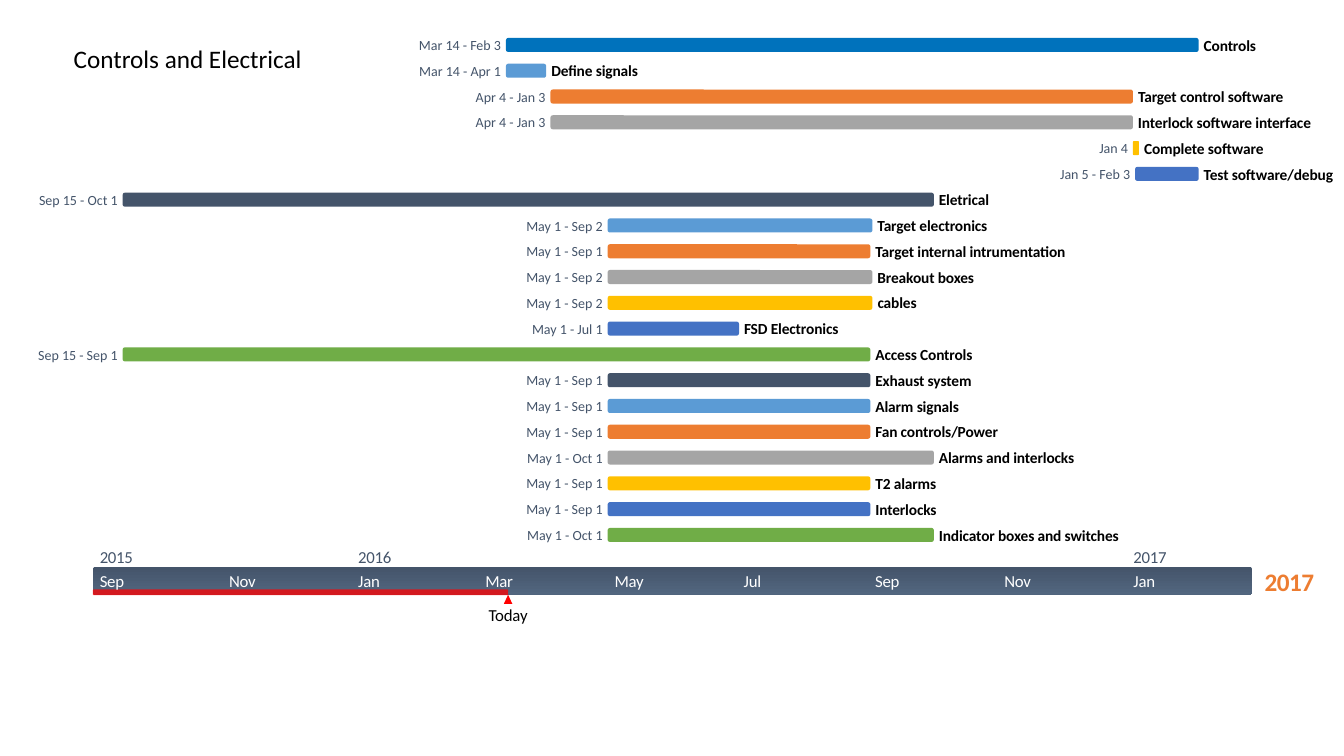
from lxml.etree import SubElement
from pptx import Presentation
from pptx.dml.color import RGBColor
from pptx.enum.shapes import MSO_SHAPE
from pptx.enum.text import MSO_ANCHOR, PP_ALIGN
from pptx.oxml.ns import qn
from pptx.util import Pt

BLACK = RGBColor(0x00, 0x00, 0x00)
WHITE = RGBColor(0xFF, 0xFF, 0xFF)
RED = RGBColor(0xFF, 0x00, 0x00)
DEEP = RGBColor(0x00, 0x72, 0xBC)
SKY = RGBColor(0x5B, 0x9B, 0xD5)
ORANGE = RGBColor(0xED, 0x7D, 0x31)
GRAY = RGBColor(0xA5, 0xA5, 0xA5)
GOLD = RGBColor(0xFF, 0xC0, 0x00)
BLUE = RGBColor(0x44, 0x72, 0xC4)
SLATE = RGBColor(0x44, 0x54, 0x6A)
STEEL = RGBColor(0x52, 0x66, 0x7F)
GREEN = RGBColor(0x70, 0xAD, 0x47)

TITLE = "Controls and Electrical"
TASKS = [
    ("Mar 14 - Feb 3", "Controls", DEEP),
    ("Mar 14 - Apr 1", "Define signals", SKY),
    ("Apr 4 - Jan 3", "Target control software", ORANGE),
    ("Apr 4 - Jan 3", "Interlock software interface", GRAY),
    ("Jan 4", "Complete software", GOLD),
    ("Jan 5 - Feb 3", "Test software/debug", BLUE),
    ("Sep 15 - Oct 1", "Eletrical", SLATE),
    ("May 1 - Sep 2", "Target electronics", SKY),
    ("May 1 - Sep 1", "Target internal intrumentation", ORANGE),
    ("May 1 - Sep 2", "Breakout boxes", GRAY),
    ("May 1 - Sep 2", "cables", GOLD),
    ("May 1 - Jul 1", "FSD Electronics", BLUE),
    ("Sep 15 - Sep 1", "Access Controls", GREEN),
    ("May 1 - Sep 1", "Exhaust system", SLATE),
    ("May 1 - Sep 1", "Alarm signals", SKY),
    ("May 1 - Sep 1", "Fan controls/Power", ORANGE),
    ("May 1 - Oct 1", "Alarms and interlocks", GRAY),
    ("May 1 - Sep 1", "T2 alarms", GOLD),
    ("May 1 - Sep 1", "Interlocks", BLUE),
    ("May 1 - Oct 1", "Indicator boxes and switches", GREEN),
]

# Days from 1 September 2015 to the first of each month.
STARTS = {"Sep": 0, "Mar": 182, "Apr": 213, "May": 243, "Jan": 488}
ENDS = {"Apr": 213, "Jul": 304, "Sep": 366, "Oct": 396, "Jan": 488, "Feb": 519}
MONTHS = [("Sep", 0), ("Nov", 61), ("Jan", 122), ("Mar", 182), ("May", 243),
          ("Jul", 304), ("Sep", 366), ("Nov", 427), ("Jan", 488)]
YEARS = [("2015", 0), ("2016", 122), ("2017", 488)]
TODAY = 196
LAST_YEAR = "2017"

LEFT, DAY = 66.4, 1.513
AXIS_TOP, AXIS_W, AXIS_H = 404.8, 828, 20
ROW_TOP, PITCH, BAR_H = 27.1, 18.42, 10
GAP, INDENT = 3.6, 4.9

prs = Presentation()
prs.slide_width, prs.slide_height = Pt(960), Pt(540)
slide = prs.slides.add_slide(prs.slide_layouts[6])


def day_x(day):
    return LEFT + day * DAY


def day_of(date, months):
    """Turn a date such as 'Mar 14' into days since the axis start."""
    month, num = date.split()
    return months[month] + int(num) - 1


def shape(kind, x, y, w, h, color):
    item = slide.shapes.add_shape(kind, Pt(x), Pt(y), Pt(w), Pt(h))
    item.shadow.inherit = False
    item.line.fill.background()
    item.fill.solid()
    item.fill.fore_color.rgb = color
    return item


def label(text, x, y, w, h, size, color, bold=False, align=PP_ALIGN.LEFT,
          track=0):
    """Add one line of text; track is letter spacing in 1/100 pt."""
    box = slide.shapes.add_textbox(Pt(x), Pt(y), Pt(w), Pt(h))
    frame = box.text_frame
    frame.word_wrap = True
    frame.vertical_anchor = MSO_ANCHOR.MIDDLE
    frame.margin_left = frame.margin_right = 0
    frame.margin_top = frame.margin_bottom = 0
    para = frame.paragraphs[0]
    para.alignment = align
    run = para.add_run()
    run.text = text
    font = run.font
    font.name, font.size, font.bold = "Calibri", Pt(size), bold
    font.color.rgb = color
    if track:
        font._element.set("spc", str(track))


# Time axis
label(LAST_YEAR, 902, 404, 38, 22, 18, ORANGE, True, PP_ALIGN.CENTER, -40)
axis = shape(MSO_SHAPE.ROUNDED_RECTANGLE, LEFT, AXIS_TOP, AXIS_W, AXIS_H, SLATE)
axis.adjustments[0] = 0.1
axis.fill.gradient()
axis.fill.gradient_angle = 270
for stop, color, place in zip(axis.fill.gradient_stops, (SLATE, STEEL), (0, 1)):
    stop.color.rgb, stop.position = color, place

now = day_x(TODAY)
done = shape(MSO_SHAPE.ROUNDED_RECTANGLE, LEFT, 421, now - LEFT, 4.2, RED)
tint = done.fill._xPr.find(qn("a:solidFill"))[0]
SubElement(tint, qn("a:alpha")).set("val", "75000")
shape(MSO_SHAPE.ISOSCELES_TRIANGLE, now - 3, 424.8, 6, 6.5, RED)
label("Today", now - 16, 432, 32, 14.4, 12, BLACK,
      align=PP_ALIGN.CENTER, track=-10)
for text, day in MONTHS:
    label(text, day_x(day) + INDENT, 408.2, 24, 13.7, 12, WHITE, track=-20)
for text, day in YEARS:
    label(text, day_x(day) + INDENT, 390.4, 28, 14.4, 12, SLATE, track=-20)

# Task rows
for row, (dates, name, color) in enumerate(TASKS):
    first, *rest = dates.split(" - ")
    start = day_of(first, STARTS)
    end = day_of(rest[0], ENDS) + 1 if rest else start + 1
    x, y = day_x(start), ROW_TOP + row * PITCH
    wide = max((end - start) * DAY, 4.3)
    shape(MSO_SHAPE.ROUNDED_RECTANGLE, x, y, wide, BAR_H, color)
    span = 4.4 * len(dates)
    label(dates, x - GAP - span, y - 1, span, 12, 10, SLATE,
          align=PP_ALIGN.RIGHT)
    label(name, x + wide + GAP, y - 1.8, 5.2 * len(name), 13.6, 11, BLACK,
          True, track=-10)

label(TITLE, 52.6, 31, 204, 22, 18, BLACK)

prs.save("out.pptx")
